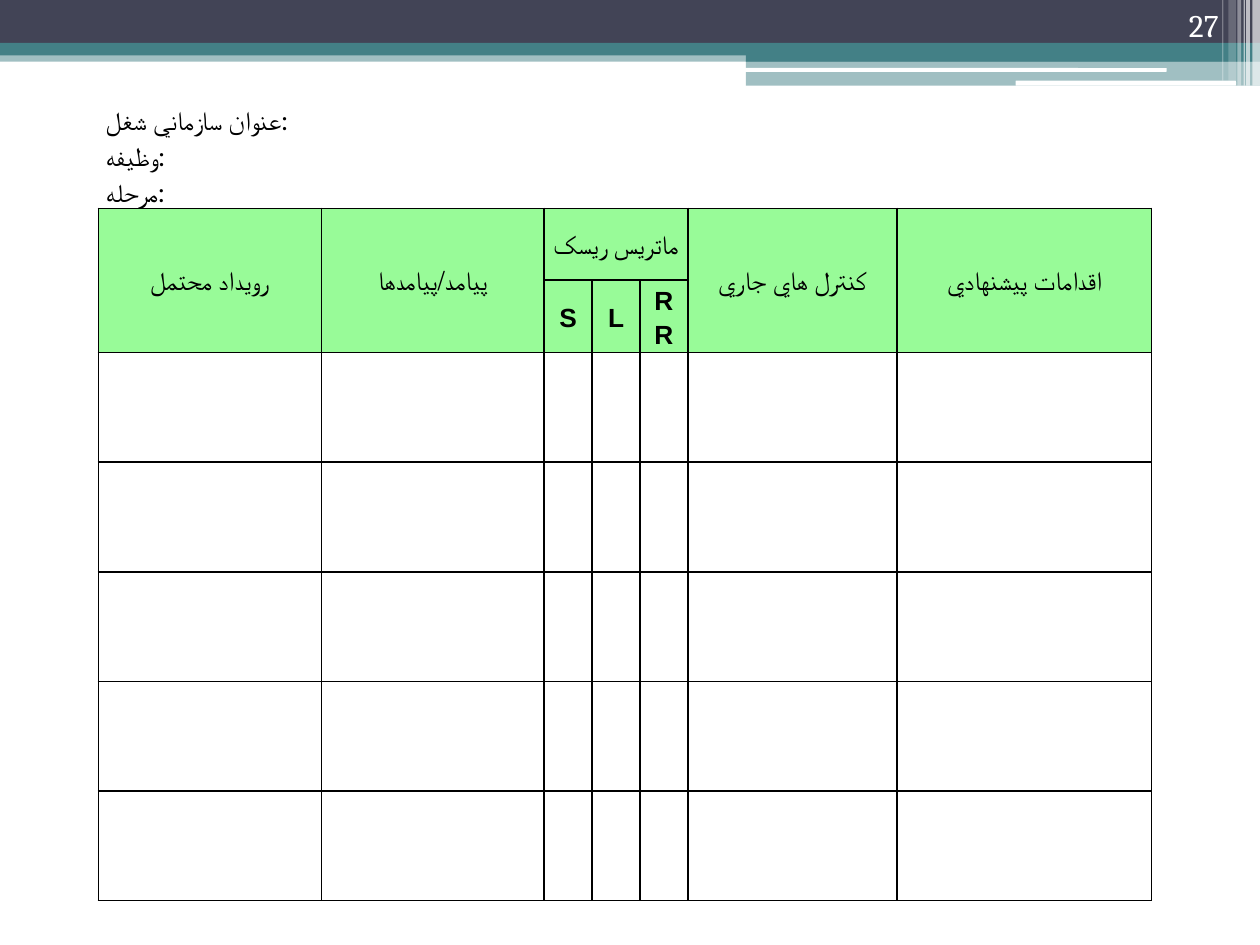
from lxml import etree
from pptx import Presentation
from pptx.dml.color import RGBColor
from pptx.enum.shapes import MSO_SHAPE
from pptx.enum.text import MSO_ANCHOR, PP_ALIGN
from pptx.oxml.ns import qn
from pptx.util import Inches, Pt

RECT, ROUND = MSO_SHAPE.RECTANGLE, MSO_SHAPE.ROUNDED_RECTANGLE
LEFT, CENTER, RIGHT = PP_ALIGN.LEFT, PP_ALIGN.CENTER, PP_ALIGN.RIGHT
TOP, MIDDLE, BOTTOM = MSO_ANCHOR.TOP, MSO_ANCHOR.MIDDLE, MSO_ANCHOR.BOTTOM

THEME = {
    "navy": "424456", "teal": "438086", "white": "FFFFFF",
    "black": "000000", "green": "98FB98",
    "body": "Lato", "latin": "Arial", "number": "Cambria",
    "body_size": Pt(15), "number_size": Pt(18), "border": Pt(1),
}


def set_borders(cell, sides):
    tcPr = cell._tc.get_or_add_tcPr()
    for side in "LRTB":
        ln = etree.SubElement(tcPr, qn(f"a:ln{side}"), w=str(THEME["border"]))
        if side in sides:
            fill = etree.SubElement(ln, qn("a:solidFill"))
            etree.SubElement(fill, qn("a:srgbClr"), val=THEME["black"])
        else:
            etree.SubElement(ln, qn("a:noFill"))


def write_cell(cell, text, align, anchor, font="body", bold=False, rtl=False):
    cell.vertical_anchor = anchor
    cell.margin_left = cell.margin_right = Inches(0.06)
    cell.margin_top = cell.margin_bottom = 0
    p = cell.text_frame.paragraphs[0]
    p.text = text
    p.alignment = align
    p.line_spacing = 1.15
    p.space_before = p.space_after = Pt(3)
    p.font.name = THEME[font]
    p.font.size = THEME["body_size"]
    p.font.bold = bold
    p.font.color.rgb = RGBColor.from_string(THEME["black"])
    if rtl:
        p._p.get_or_add_pPr().set("rtl", "1")


prs = Presentation()
prs.slide_width, prs.slide_height = Inches(10), Inches(7.5)
s = prs.slides.add_slide(prs.slide_layouts[6])

bands = [
    (RECT, 0, 0.4, 10, 0.09, "teal", 50),
    (RECT, 0, 0, 10, 0.34, "navy", 100),
    (RECT, 0, 0.34, 10, 0.1, "teal", 100),
    (RECT, 5.92, 0.39, 4.08, 0.1, "teal", 100),
    (RECT, 5.92, 0.48, 4.08, 0.2, "teal", 50),
    (ROUND, 5.91, 0.54, 3.35, 0.03, "white", 100),
    (ROUND, 8.06, 0.64, 1.75, 0.04, "white", 100),
]
stripes = [
    (9.94, 0.06, 0.68, 65), (9.89, 0.03, 0.68, 65), (9.87, 0.01, 0.68, 60),
    (9.82, 0.03, 0.68, 40), (9.75, 0.06, 0.64, 20), (9.7, 0.01, 0.64, 30),
]
bands += [(RECT, x, 0, w, h, "white", alpha) for x, w, h, alpha in stripes]
for kind, x, y, w, h, color, alpha in bands:
    sp = s.shapes.add_shape(kind, Inches(x), Inches(y), Inches(w), Inches(h))
    sp.shadow.inherit = False
    sp.line.fill.background()
    sp.fill.solid()
    sp.fill.fore_color.rgb = RGBColor.from_string(THEME[color])
    if alpha < 100:
        clr = sp._element.spPr.find(qn("a:solidFill"))[0]
        etree.SubElement(clr, qn("a:alpha"), val=str(alpha * 1000))

number = s.shapes.add_textbox(Inches(8.94), 0, Inches(0.83), Inches(0.4))
tf = number.text_frame
tf.word_wrap = True
tf.vertical_anchor = BOTTOM
p = tf.paragraphs[0]
p.text = "27"
p.alignment = RIGHT
p.font.name = THEME["number"]
p.font.size = THEME["number_size"]
p.font.color.rgb = RGBColor.from_string(THEME["white"])

col_widths = [1.77, 1.77, 0.38, 0.38, 0.38, 1.66, 2.02]
row_heights = [0.28] * 3 + [0.57] * 2 + [0.87] * 5
frame = s.shapes.add_table(len(row_heights), len(col_widths), Inches(0.78), Inches(0.79),
                           Inches(sum(col_widths)), Inches(sum(row_heights)))
table = frame.table
table.first_row = table.horz_banding = False
for col, width in zip(table.columns, col_widths):
    col.width = Inches(width)
for row, height in zip(table.rows, row_heights):
    row.height = Inches(height)

for r, row in enumerate(table.rows):
    for c, cell in enumerate(row.cells):
        set_borders(cell, "LRTB" if r > 2 else "B" if r == 2 else "")
        if r in (3, 4):
            cell.fill.solid()
            cell.fill.fore_color.rgb = RGBColor.from_string(THEME["green"])
        elif r > 4 and c == 0:
            cell.fill.solid()
            cell.fill.fore_color.rgb = RGBColor.from_string(THEME["white"])
        else:
            cell.fill.background()

for r, text in enumerate(["عنوان سازماني شغل:", "وظيفه:", "مرحله:"]):
    table.cell(r, 0).merge(table.cell(r, 6))
    write_cell(table.cell(r, 0), text, LEFT, TOP)

headers = [
    (0, 0, 4, "رويداد محتمل"), (1, 1, 4, "پيامد/پيامدها"), (2, 4, 3, "ماتريس ريسک"),
    (5, 5, 4, "کنترل هاي جاري"), (6, 6, 4, "اقدامات پيشنهادي"),
]
for first, last, bottom, text in headers:
    table.cell(3, first).merge(table.cell(bottom, last))
    write_cell(table.cell(3, first), text, CENTER, MIDDLE, rtl=True)

for c, text in enumerate(["S", "L", "RR"], start=2):
    write_cell(table.cell(4, c), text, CENTER, MIDDLE, font="latin", bold=True)

prs.save("out.pptx")
